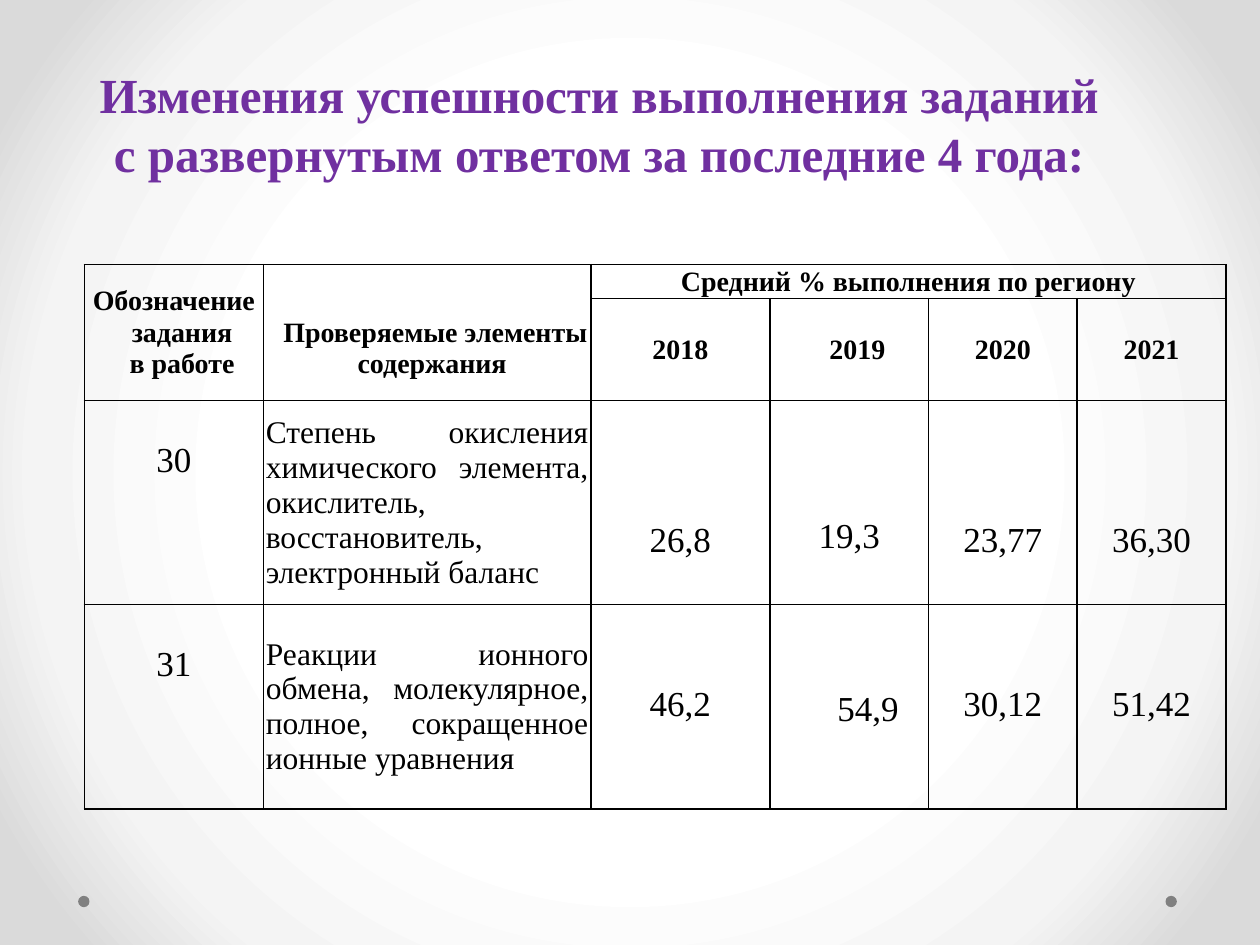
from pptx import Presentation
from pptx.dml.color import RGBColor
from pptx.enum.shapes import MSO_SHAPE as Shape
from pptx.enum.text import MSO_ANCHOR as Anchor, PP_ALIGN as Align
from pptx.oxml import parse_xml
from pptx.util import Inches, Pt

FONT = "Times New Roman"
SPACE = ('xmlns:a="http://schemas.openxmlformats.org/drawingml/2006/main" '
         'xmlns:p="http://schemas.openxmlformats.org/presentationml/2006/main"')
LINE = 0.32  # height of one 20 pt line, inches

TITLE = ["Изменения успешности выполнения заданий",
         "с развернутым ответом за последние 4 года:"]
COLS = [1.42, 2.6, 1.42, 1.26, 1.18, 1.18]
ROWS = [0.27, 0.81, 1.62, 1.62]
YEARS = ["2018", "2019", "2020", "2021"]
TASKS = [
    ("30", "Степень окисления химического элемента, окислитель, "
           "восстановитель, электронный баланс",
     ["26,8", "19,3", "23,77", "36,30"]),
    ("31", "Реакции ионного обмена, молекулярное, полное, "
           "сокращенное ионные уравнения",
     ["46,2", "54,9", "30,12", "51,42"]),
]


def color(code):
    return RGBColor.from_string(code)


def style(par, size, bold, code="000000", align=Align.CENTER):
    par.alignment = align
    font = par.font
    font.name, font.size, font.bold = FONT, Pt(size), bold
    font.color.rgb = color(code)


def indent(par, left, first):
    props = par._p.get_or_add_pPr()
    props.set("marL", str(Inches(left)))
    props.set("indent", str(Inches(first)))


def backdrop(slide):
    stops = "".join(
        f'<a:gs pos="{pos}000"><a:srgbClr val="{code}"/></a:gs>'
        for pos, code in [(50, "FFFFFF"), (76, "F4F4F4"), (92, "DADADA")])
    slide.element.cSld.insert(0, parse_xml(
        f'<p:bg {SPACE}><p:bgPr><a:gradFill rotWithShape="1">'
        f'<a:gsLst>{stops}</a:gsLst><a:path path="circle">'
        '<a:fillToRect l="50000" t="50000" r="50000" b="50000"/></a:path>'
        '</a:gradFill><a:effectLst/></p:bgPr></p:bg>'))


def dots(slide, left, top, width, size):
    for x in (left, left + width - size):
        dot = slide.shapes.add_shape(
            Shape.OVAL, Inches(x), Inches(top), Inches(size), Inches(size))
        dot.shadow.inherit = False
        dot.fill.solid()
        dot.fill.fore_color.rgb = color("808080")
        dot.line.fill.background()


def heading(slide, left, top, width, height):
    box = slide.shapes.add_textbox(
        Inches(left), Inches(top), Inches(width), Inches(height))
    frame = box.text_frame
    frame.word_wrap = True
    frame.vertical_anchor = Anchor.MIDDLE
    frame.margin_right = Inches(0.16)
    frame.margin_bottom = Inches(0.34)
    frame.text = "\n".join(TITLE)
    for par in frame.paragraphs:
        style(par, 28, True, "7030A0")


def border(cell):
    props = cell._tc.get_or_add_tcPr()
    for side in ("lnL", "lnR", "lnT", "lnB"):
        props.append(parse_xml(
            f'<a:{side} {SPACE} w="{Pt(1)}"><a:solidFill>'
            f'<a:srgbClr val="000000"/></a:solidFill></a:{side}>'))


def write(cell, text, size=16, bold=True, align=Align.CENTER,
          anchor=Anchor.MIDDLE, top=0):
    cell.text = text
    cell.vertical_anchor = anchor
    cell.margin_top = Inches(top)
    for par in cell.text_frame.paragraphs:
        style(par, size, bold, align=align)
    return cell.text_frame.paragraphs


def results(slide, left, top):
    table = slide.shapes.add_table(
        len(ROWS), len(COLS), Inches(left), Inches(top),
        Inches(sum(COLS)), Inches(sum(ROWS))).table
    table.first_row = table.horz_banding = False
    for col, width in zip(table.columns, COLS):
        col.width = Inches(width)
    for row, height in zip(table.rows, ROWS):
        row.height = Inches(height)
    for cell in table.iter_cells():
        cell.margin_left = cell.margin_right = Inches(0.02)
        cell.margin_bottom = 0
        border(cell)
        cell.fill.background()
        write(cell, "")

    # Header rows
    for col in (0, 1):
        table.cell(0, col).merge(table.cell(1, col))
    table.cell(0, 2).merge(table.cell(0, 5))
    lines = write(table.cell(0, 0), "Обозначение\nзадания\nв работе")
    topic = write(table.cell(0, 1), "Проверяемые элементы содержания", top=0.25)
    write(table.cell(0, 2), "Средний % выполнения по региону")
    years = [write(table.cell(1, col), year)[0]
             for col, year in enumerate(YEARS, 2)]
    for par in (*lines[1:], *topic, years[1]):
        indent(par, 0.08, 0.05)

    # Task rows; the 2019 column is centred, the others hang from the top
    for row, (code, about, rates) in enumerate(TASKS, 2):
        write(table.cell(row, 0), code, 20, False,
              anchor=Anchor.TOP, top=LINE)
        write(table.cell(row, 1), about, 18, False, Align.JUSTIFY)
        for col, rate in enumerate(rates, 2):
            cell = table.cell(row, col)
            if YEARS[col - 2] != "2019":
                write(cell, rate, 20, False, anchor=Anchor.TOP,
                      top=LINE * (5 - row))
                continue
            par = write(cell, rate, 20, False, top=0.5 if row == 2 else 0)[0]
            par.line_spacing = 1.15
            if row == 3:
                indent(par, 0.3, 0)


def main():
    deck = Presentation()
    deck.slide_width, deck.slide_height = Inches(10), Inches(7.5)
    slide = deck.slides.add_slide(deck.slide_layouts[6])
    backdrop(slide)
    dots(slide, 0.62, 7.11, 8.72, 0.09)
    results(slide, 0.67, 2.1)
    heading(slide, 0, 0.45, 9.57, 1.35)
    deck.save("out.pptx")


if __name__ == "__main__":
    main()
